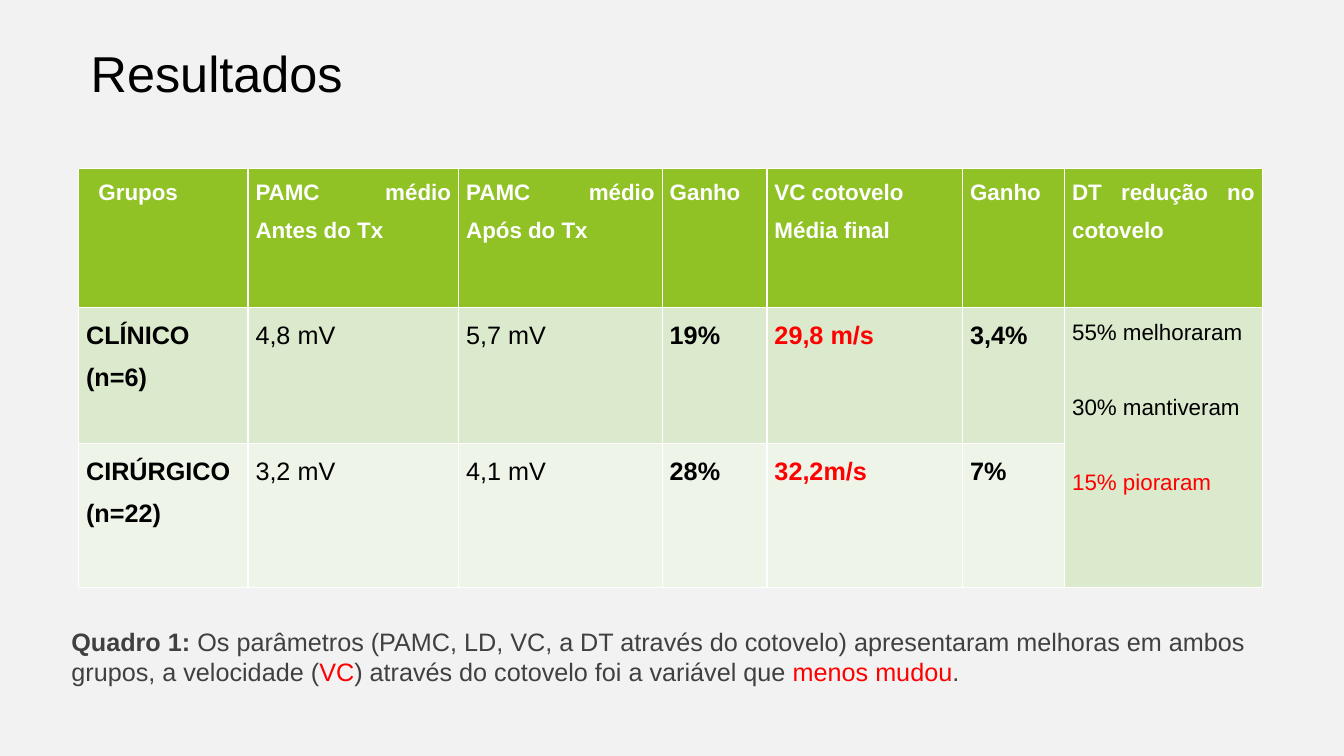
from pptx import Presentation
from pptx.dml.color import RGBColor
from pptx.enum.text import MSO_ANCHOR, PP_ALIGN as Align
from pptx.util import Cm, Pt

FONT = "Arial"
BLACK, WHITE, GRAY, RED = "000000", "FFFFFF", "404040", "FF0000"
HEADER_FILL, ROW_FILLS = "90C226", ("DBE9CD", "EEF4E8")
COL_WIDTHS = (4.27, 5.31, 5.13, 2.64, 4.93, 2.57, 4.98)
ROW_HEIGHTS = (3.51, 3.43, 3.63)
HEADERS = ("\xa0 Grupos".replace("\xa0", " "), "PAMC médio Antes do Tx", "PAMC médio Após do Tx",
           "Ganho", "VC cotovelo\nMédia final", "Ganho", "DT redução no cotovelo")
GROUPS = (("CLÍNICO (n=6)", "4,8 mV", "5,7 mV", "19%", "29,8 m/s", "3,4%"),
          ("CIRÚRGICO (n=22)", "3,2 mV", "4,1 mV", "28%", "32,2m/s", "7%"))
PLAIN_COLS, VC_COL, DT_COL = (1, 2), 4, 6
DT_RESULTS = (("55% melhoraram", BLACK), ("30% mantiveram", BLACK), ("15% pioraram", RED))
CAPTION = (("Quadro 1: ", GRAY, True),
           ("Os parâmetros (PAMC, LD, VC, a DT através do cotovelo) apresentaram melhoras "
            "em ambos grupos, a velocidade (", GRAY, False),
           ("VC", RED, False),
           (") através do cotovelo foi a variável que ", GRAY, False),
           ("menos mudou", RED, False),
           (".", GRAY, False))


def rgb(color):
    return RGBColor.from_string(color)


def add_text(p, text, size=18, color=BLACK, bold=False):
    r = p.add_run()
    r.text = text
    r.font.name, r.font.size, r.font.bold = FONT, Pt(size), bold
    r.font.color.rgb = rgb(color)


def fill_cell(cell, fill, lines, gap=0, **fmt):
    """Fill a cell with justified lines, each a (text, color) pair."""
    cell.fill.solid()
    cell.fill.fore_color.rgb = rgb(fill)
    cell.margin_left = cell.margin_right = Cm(0.19)
    cell.margin_top = cell.margin_bottom = 0
    tf = cell.text_frame
    for i, (text, color) in enumerate(lines):
        p = tf.add_paragraph() if i else tf.paragraphs[0]
        p.alignment, p.line_spacing = Align.JUSTIFY, 1.5
        if i and gap:
            p.space_before = Pt(gap)
        add_text(p, text, color=color, **fmt)


def add_title(s, text):
    sp = s.shapes.title
    sp.left, sp.top, sp.width, sp.height = Cm(2.03), Cm(0.94), Cm(29.21), Cm(2.31)
    tf = sp.text_frame
    tf.vertical_anchor = MSO_ANCHOR.TOP
    p = tf.paragraphs[0]
    p.alignment = Align.LEFT
    add_text(p, text, size=36)


def add_results_table(s):
    table = s.shapes.add_table(len(ROW_HEIGHTS), len(COL_WIDTHS), Cm(1.98), Cm(4.24),
                               Cm(sum(COL_WIDTHS)), Cm(sum(ROW_HEIGHTS))).table
    for col, width in zip(table.columns, COL_WIDTHS):
        col.width = Cm(width)
    for row, height in zip(table.rows, ROW_HEIGHTS):
        row.height = Cm(height)
    for c, text in enumerate(HEADERS):
        lines = [(line, WHITE) for line in text.split("\n")]
        fill_cell(table.cell(0, c), HEADER_FILL, lines, size=16, bold=True)
    for r, (group, fill) in enumerate(zip(GROUPS, ROW_FILLS), start=1):
        for c, text in enumerate(group):
            color = RED if c == VC_COL else BLACK
            fill_cell(table.cell(r, c), fill, [(text, color)], bold=c not in PLAIN_COLS)
    dt_cell = table.cell(1, DT_COL)
    dt_cell.merge(table.cell(2, DT_COL))
    fill_cell(dt_cell, ROW_FILLS[0], DT_RESULTS, gap=27, size=16)


def add_caption(s, runs):
    tf = s.shapes.add_textbox(Cm(1.55), Cm(15.65), Cm(30.28), Cm(2.06)).text_frame
    tf.word_wrap = True
    for text, color, bold in runs:
        add_text(tf.paragraphs[0], text, color=color, bold=bold)


def main():
    prs = Presentation()
    prs.slide_width, prs.slide_height = Cm(33.87), Cm(19.05)
    s = prs.slides.add_slide(prs.slide_layouts[5])
    s.background.fill.solid()
    s.background.fill.fore_color.rgb = rgb("F2F2F2")
    add_title(s, "Resultados")
    add_results_table(s)
    add_caption(s, CAPTION)
    prs.save("out.pptx")


if __name__ == "__main__":
    main()
